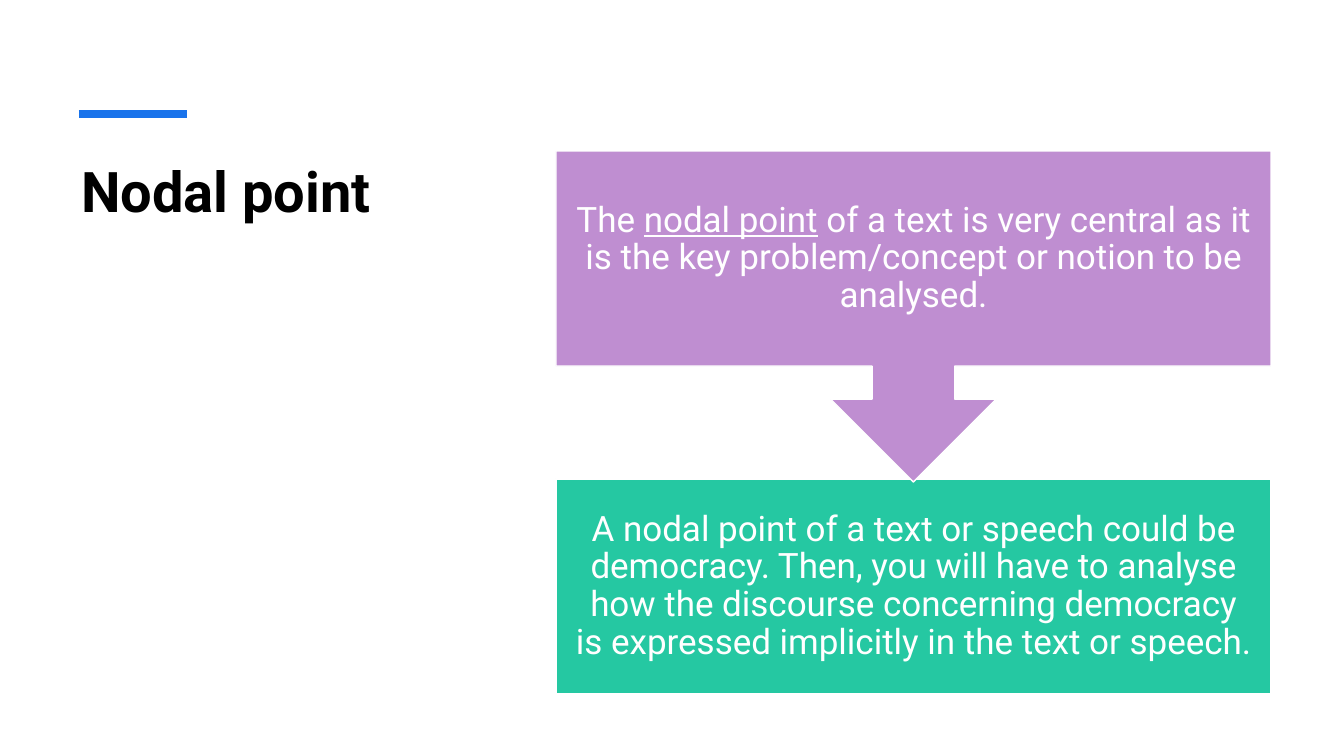
from dataclasses import dataclass

from lxml import etree
from pptx import Presentation
from pptx.dml.color import RGBColor
from pptx.enum.shapes import MSO_CONNECTOR, MSO_SHAPE
from pptx.enum.text import MSO_ANCHOR, PP_ALIGN
from pptx.oxml.ns import qn
from pptx.util import Emu, Pt

RECTANGLE = MSO_SHAPE.RECTANGLE
DOWN_CALLOUT = MSO_SHAPE.DOWN_ARROW_CALLOUT
STRAIGHT = MSO_CONNECTOR.STRAIGHT
TOP, MIDDLE = MSO_ANCHOR.TOP, MSO_ANCHOR.MIDDLE
LEFT, CENTER = PP_ALIGN.LEFT, PP_ALIGN.CENTER

SLIDE_W, SLIDE_H = 1344, 756
EMU_PER_PX = 12192000 / SLIDE_W
FONT = "Roboto"
WHITE, BLACK, BLUE = "FFFFFF", "000000", "1973EB"
PURPLE, GREEN = "BF8ED1", "25C8A2"
BOX_X, BOX_W, BOX_INSET = 556, 715, 19


@dataclass(frozen=True)
class Step:
    preset: MSO_SHAPE
    y: int
    h: int
    fill: str
    runs: tuple[tuple[str, bool], ...]  # text, underlined


# Back to front: the arrow tip overlaps the lower box
STEPS = (
    Step(RECTANGLE, 479, 215, GREEN, (
        ("A nodal point of a text or speech could be democracy. Then, you will "
         "have to analyse how the discourse concerning democracy is expressed "
         "implicitly in the text or speech.", False),
    )),
    Step(DOWN_CALLOUT, 151, 331, PURPLE, (
        ("The ", False),
        ("nodal point", True),
        (" of a text is very central as it is the key problem/concept or "
         "notion to be analysed.", False),
    )),
)


def px(n: int) -> Emu:
    return Emu(round(n * EMU_PER_PX))


def color(value: str) -> RGBColor:
    return RGBColor.from_string(value)


def style_run(r, size: int, value: str, bold: bool = False) -> None:
    r.font.name = FONT
    r.font.size = Pt(size)
    r.font.bold = bold
    r.font.color.rgb = color(value)


def add_title(slide, text: str) -> None:
    sp = slide.shapes.title
    sp.left, sp.top, sp.width, sp.height = px(71), px(151), px(405), px(432)
    tf = sp.text_frame
    tf.text = text
    tf.vertical_anchor = TOP
    p = tf.paragraphs[0]
    p.alignment = LEFT
    style_run(p.runs[0], 40, BLACK, bold=True)


def add_accent(slide) -> None:
    line = slide.shapes.add_connector(STRAIGHT, px(79), px(114), px(187), px(114))
    line.line.color.rgb = color(BLUE)
    line.line.width = Pt(6)
    etree.SubElement(line._element.spPr, qn("a:effectLst"))


def add_step(slide, step: Step) -> None:
    sp = slide.shapes.add_shape(step.preset, px(BOX_X), px(step.y), px(BOX_W), px(step.h))
    sp.shadow.inherit = False
    sp.fill.solid()
    sp.fill.fore_color.rgb = color(step.fill)
    sp.line.color.rgb = color(WHITE)
    sp.line.width = Pt(1)
    tf = sp.text_frame
    tf.word_wrap = True
    tf.vertical_anchor = MIDDLE
    tf.margin_left = tf.margin_right = px(BOX_INSET)
    tf.margin_top = tf.margin_bottom = px(BOX_INSET)
    p = tf.paragraphs[0]
    p.alignment = CENTER
    p.line_spacing = 0.9
    for text, underlined in step.runs:
        r = p.add_run()
        r.text = text
        style_run(r, 25, WHITE)
        r.font.underline = underlined


def main() -> None:
    prs = Presentation()
    prs.slide_width, prs.slide_height = px(SLIDE_W), px(SLIDE_H)
    slide = prs.slides.add_slide(prs.slide_layouts[5])

    # Heading with accent bar
    add_title(slide, "Nodal point")
    add_accent(slide)

    # Flow of two boxes
    for step in STEPS:
        add_step(slide, step)

    prs.save("out.pptx")


if __name__ == "__main__":
    main()
